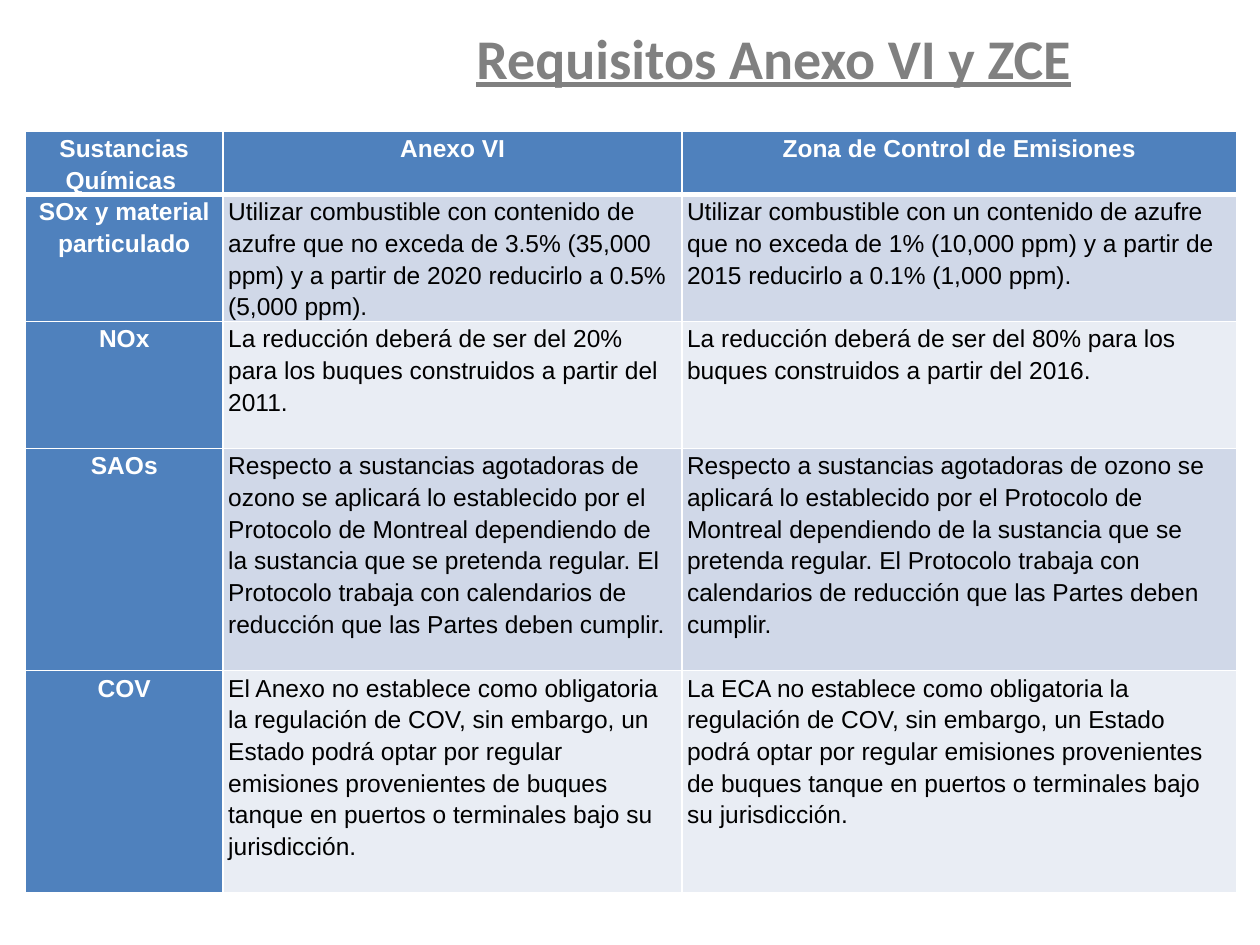
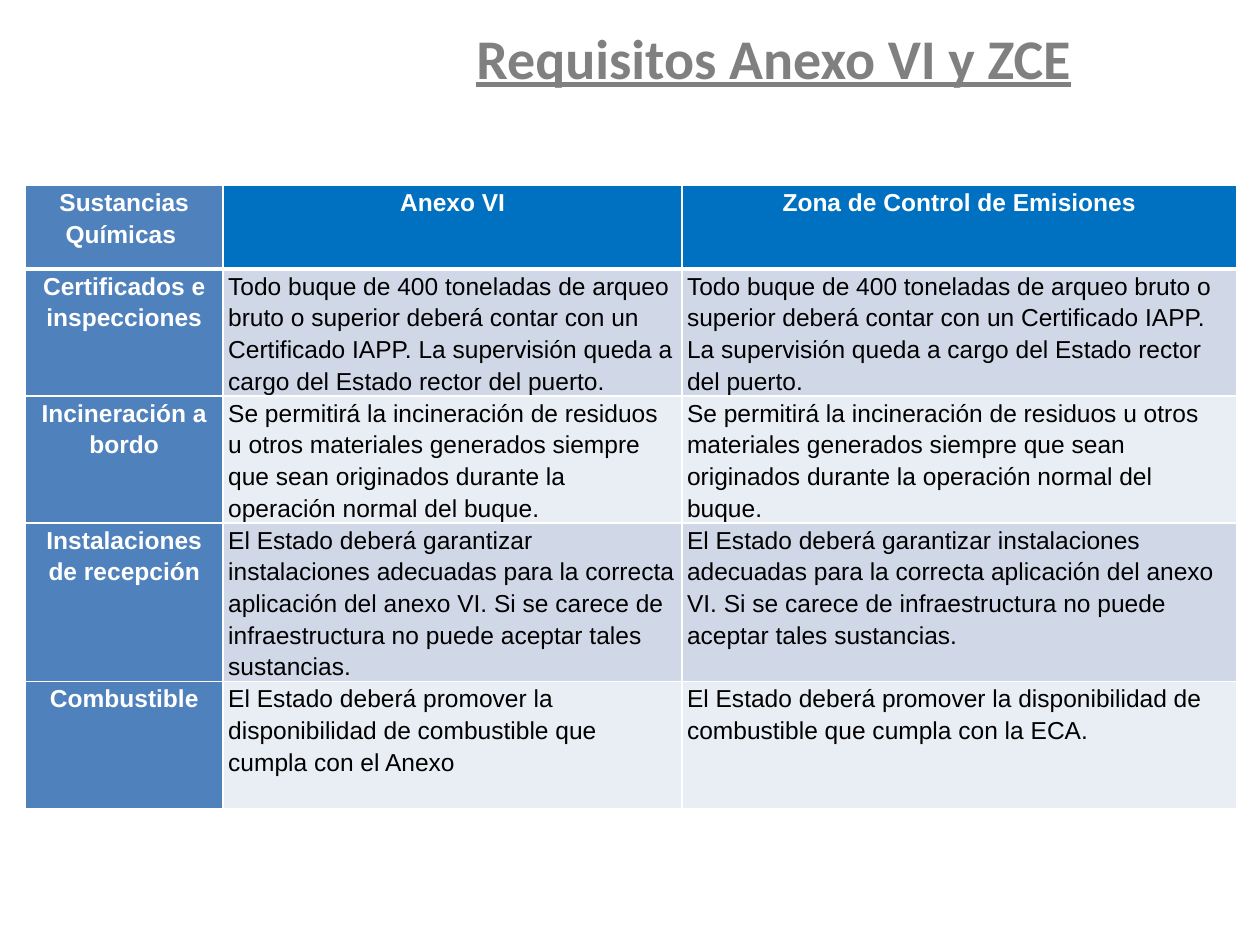
from dataclasses import dataclass

from lxml.etree import SubElement
from pptx import Presentation
from pptx.dml.color import RGBColor
from pptx.enum.text import MSO_ANCHOR, PP_ALIGN
from pptx.oxml.ns import qn
from pptx.slide import Slide
from pptx.table import _Cell
from pptx.util import Cm, Pt

COLORS = {
    "title": "808080",
    "blue": "4F81BD",
    "bright_blue": "0070C0",
    "band_dark": "D0D8E8",
    "band_light": "E9EDF4",
    "white": "FFFFFF",
    "black": "000000",
}
TITLE = "Requisitos Anexo VI y ZCE"
HEADERS = ("Sustancias Químicas ", "Anexo VI", "Zona de Control de Emisiones")
COLUMN_WIDTHS = (Cm(3.99), Cm(9.25), Cm(11.18))
TABLE_LEFT = Cm(0.51)
LINE_HEIGHT = Cm(0.64)


@dataclass
class Requirement:
    topic: str
    annex: str
    zone: str
    lines: int


@dataclass
class RequirementTable:
    top: Cm
    header_height: Cm
    header_color: str
    rows: list[Requirement]


OZONE = (
    "Respecto a sustancias agotadoras de ozono se aplicará lo establecido por el "
    "Protocolo de Montreal dependiendo de la sustancia que se pretenda regular. El "
    "Protocolo trabaja con calendarios de reducción que las Partes deben cumplir."
)
VOC = (
    "no establece como obligatoria la regulación de COV, sin embargo, un Estado podrá "
    "optar por regular emisiones provenientes de buques tanque en puertos o terminales "
    "bajo su jurisdicción."
)
CERTIFICATE = (
    "Todo buque de 400 toneladas de arqueo bruto o superior deberá contar con un "
    "Certificado IAPP. La supervisión queda a cargo del Estado rector del puerto."
)
INCINERATION = (
    "Se permitirá la incineración de residuos u otros materiales generados siempre que "
    "sean originados durante la operación normal del buque."
)
RECEPTION = (
    "El Estado deberá garantizar instalaciones adecuadas para la correcta aplicación del "
    "anexo VI. Si se carece de infraestructura no puede aceptar tales sustancias."
)
FUEL = "El Estado deberá promover la disponibilidad de combustible que cumpla con"

TABLES = [
    RequirementTable(Cm(2.64), LINE_HEIGHT * 2, "blue", [
        Requirement(
            "SOx y material particulado",
            "Utilizar combustible con contenido de azufre que no exceda de 3.5% "
            "(35,000 ppm) y a partir de 2020 reducirlo a 0.5% (5,000 ppm).",
            "Utilizar combustible con un contenido de azufre que no exceda de 1% "
            "(10,000 ppm) y a partir de 2015 reducirlo a 0.1% (1,000 ppm).",
            4,
        ),
        Requirement(
            "NOx",
            "La reducción deberá de ser del 20% para los buques construidos a partir del 2011.",
            "La reducción deberá de ser del 80% para los buques construidos a partir del 2016.",
            4,
        ),
        Requirement("SAOs", OZONE, OZONE, 7),
        Requirement("COV", f"El Anexo {VOC}", f"La ECA {VOC}", 7),
    ]),
    RequirementTable(Cm(3.73), Cm(1.69), "bright_blue", [
        Requirement("Certificados e inspecciones", CERTIFICATE, CERTIFICATE, 4),
        Requirement("Incineración a bordo", INCINERATION, INCINERATION, 4),
        Requirement("Instalaciones de recepción", RECEPTION, RECEPTION, 5),
        Requirement("Combustible", f"{FUEL} el Anexo", f"{FUEL} la ECA.", 4),
    ]),
]


def rgb(name: str) -> RGBColor:
    return RGBColor.from_string(COLORS[name])


def add_title(s: Slide) -> None:
    sp = s.shapes.title
    sp.left, sp.top, sp.width, sp.height = Cm(9.3), Cm(0.33), Cm(12.6), Cm(1.63)
    tf = sp.text_frame
    tf.text = TITLE
    tf.word_wrap = False
    tf.vertical_anchor = MSO_ANCHOR.MIDDLE
    p = tf.paragraphs[0]
    p.alignment = PP_ALIGN.CENTER
    font = p.runs[0].font
    font.name, font.size = "Calibri", Pt(32)
    font.bold = font.underline = True
    font.color.rgb = rgb("title")


def set_borders(cell: _Cell, top: float, bottom: float) -> None:
    props = cell._tc.get_or_add_tcPr()
    for side, width in (("L", 1), ("R", 1), ("T", top), ("B", bottom)):
        line = SubElement(props, qn(f"a:ln{side}"), w=str(Pt(width)))
        fill = SubElement(line, qn("a:solidFill"))
        SubElement(fill, qn("a:srgbClr"), val=COLORS["white"])


def fill_cell(cell: _Cell, text: str, color: str, heading: bool) -> None:
    cell.fill.solid()
    cell.fill.fore_color.rgb = rgb(color)
    cell.margin_left = cell.margin_right = Cm(0.1)
    cell.margin_top = cell.margin_bottom = 0
    cell.text_frame.text = text
    p = cell.text_frame.paragraphs[0]
    p.alignment = PP_ALIGN.CENTER if heading else PP_ALIGN.LEFT
    p.line_spacing = 1.15
    font = p.runs[0].font
    font.name, font.size, font.bold = "Arial", Pt(14), heading
    font.color.rgb = rgb("white" if heading else "black")


def add_requirements(s: Slide, spec: RequirementTable) -> None:
    heights = [spec.header_height] + [LINE_HEIGHT * r.lines for r in spec.rows]
    table = s.shapes.add_table(
        len(heights), len(HEADERS), TABLE_LEFT, spec.top, sum(COLUMN_WIDTHS), sum(heights)
    ).table
    table.horz_banding = False
    for column, width in zip(table.columns, COLUMN_WIDTHS):
        column.width = width
    texts = [HEADERS] + [(r.topic, r.annex, r.zone) for r in spec.rows]
    for i, (height, row) in enumerate(zip(heights, texts)):
        table.rows[i].height = height
        band = "band_dark" if i % 2 else "band_light"
        for j, text in enumerate(row):
            color = "blue" if j == 0 else spec.header_color if i == 0 else band
            cell = table.cell(i, j)
            set_borders(cell, top=3 if i == 1 else 1, bottom=3 if i == 0 else 1)
            fill_cell(cell, text, color, heading=i == 0 or j == 0)


def main() -> None:
    prs = Presentation()
    prs.slide_width, prs.slide_height = Cm(25.4), Cm(19.05)
    for requirements in TABLES:
        s = prs.slides.add_slide(prs.slide_layouts[5])
        add_requirements(s, requirements)
        add_title(s)
    prs.save("out.pptx")


if __name__ == "__main__":
    main()
